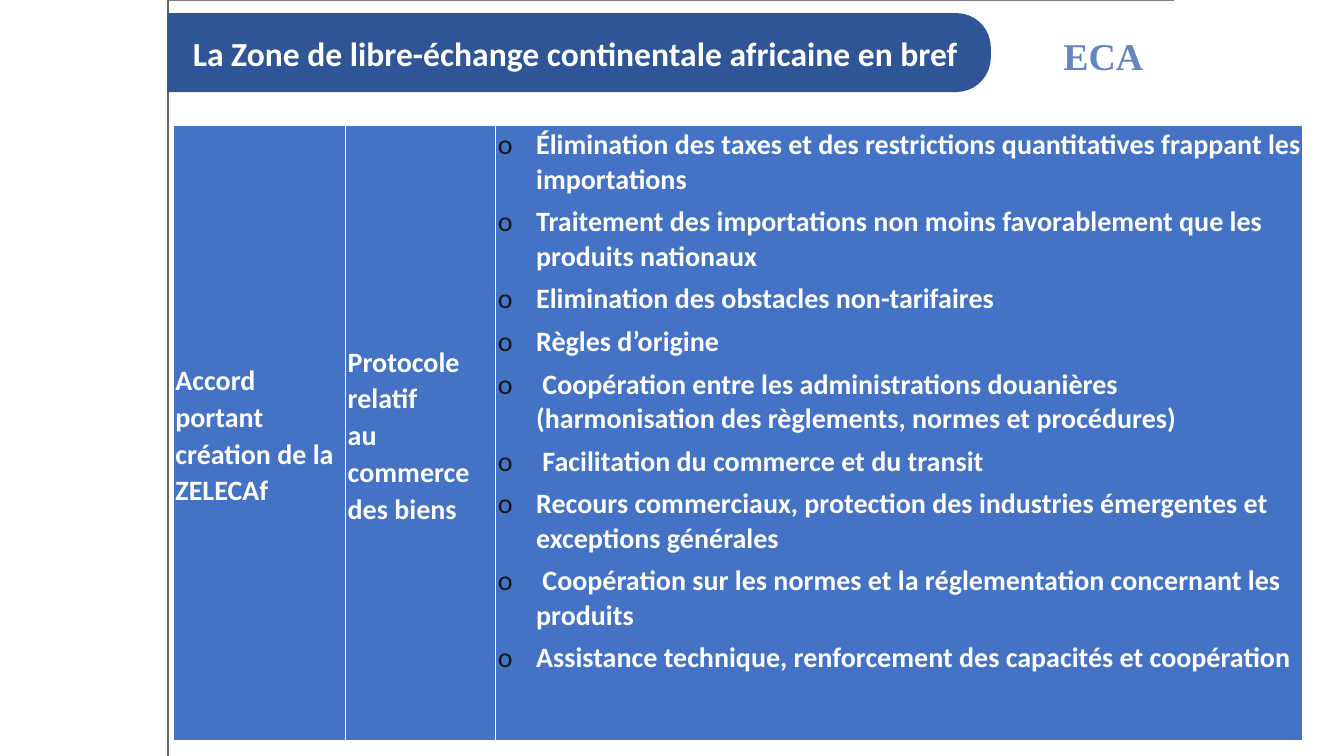
from dataclasses import dataclass
from math import cos, radians, sin

from lxml import etree
from pptx import Presentation
from pptx.dml.color import RGBColor
from pptx.enum.shapes import MSO_CONNECTOR
from pptx.enum.text import MSO_ANCHOR, MSO_AUTO_SIZE, PP_ALIGN
from pptx.oxml.ns import qn
from pptx.util import Emu, Inches, Pt

WHITE = RGBColor(0xFF, 0xFF, 0xFF)
NAVY = RGBColor(0x2F, 0x55, 0x97)
BLUE = RGBColor(0x44, 0x72, 0xC4)
PALE_BLUE = RGBColor(0x63, 0x85, 0xC1)
FRAME_GREY = RGBColor(0x7B, 0x7B, 0x7B)
RULE_GREY = RGBColor(0x66, 0x66, 0x66)
BULLET_BLACK = RGBColor(0x18, 0x17, 0x17)

STRAIGHT = MSO_CONNECTOR.STRAIGHT
MIDDLE = MSO_ANCHOR.MIDDLE
TOP = MSO_ANCHOR.TOP
CENTER = PP_ALIGN.CENTER
NO_AUTOSIZE = MSO_AUTO_SIZE.NONE
BODY_FONT = "Calibri"
MARK_FONT = "Times New Roman"

COLUMNS, ROWS = 160, 90
TITLE_ONLY = 5
HANGING = Inches(0.38)
BORDERS = {"a:lnL": 1, "a:lnR": 1, "a:lnT": 1, "a:lnB": 3}


@dataclass(frozen=True)
class Area:
    left: float
    top: float
    width: float
    height: float

    def lengths(self) -> tuple:
        return tuple(grid(n) for n in (self.left, self.top, self.width, self.height))


@dataclass(frozen=True)
class Column:
    width: float
    texts: tuple
    anchor: object = MIDDLE
    spacing: float = 1.07
    after: float = 0
    bulleted: bool = False


BANNER = Area(19.92, 1.56, 98.04, 9.4)
MARK = Area(126.6, 3.84, 9.96, 5.4)
TABLE = Area(20.64, 14.88, 134.4, 73.44)
FRAME_LEFT, FRAME_RIGHT = 20, 139.8
CORNER = 4.1

TABLE_COLUMNS = (
    Column(20.52, ("Accord portant création de la ZELECAf",)),
    Column(17.88, ("Protocole relatif", "au commerce des biens"), after=0.1),
    Column(96, (
        "Élimination des taxes et des restrictions quantitatives frappant les importations",
        "Traitement des importations non moins favorablement que les produits nationaux",
        "Elimination des obstacles non-tarifaires",
        "Règles d’origine",
        " Coopération entre les administrations douanières "
        "(harmonisation des règlements, normes et procédures)",
        " Facilitation du commerce et du transit",
        "Recours commerciaux, protection des industries émergentes et exceptions générales",
        " Coopération sur les normes et la réglementation concernant les produits",
        "Assistance technique, renforcement des capacités et coopération",
    ), TOP, 1, 6, True),
)


def grid(count: float) -> Emu:
    return Emu(round(count * Inches(13.333333) / COLUMNS))


def add_span(para, text: str, size: float, color: RGBColor, font: str = BODY_FONT) -> None:
    span = para.add_run()
    span.text = text
    span.font.name = font
    span.font.size = Pt(size)
    span.font.bold = True
    span.font.color.rgb = color


def set_insets(frame, inset: float) -> None:
    frame.margin_left = frame.margin_right = Inches(inset)
    frame.margin_top = frame.margin_bottom = Inches(inset)
    frame.word_wrap = True


def add_outline(page, points: list, closed: bool):
    spots = [(grid(x), grid(y)) for x, y in points]
    builder = page.shapes.build_freeform(*spots[0])
    builder.add_line_segments(spots[1:], close=closed)
    shape = builder.convert_to_shape()
    shape.shadow.inherit = False
    return shape


def add_frame(page) -> None:
    frame = add_outline(page, [(FRAME_RIGHT, ROWS), (FRAME_LEFT, ROWS),
                               (FRAME_LEFT, 0), (FRAME_RIGHT, 0)], False)
    frame.fill.background()
    frame.line.color.rgb = FRAME_GREY
    frame.line.width = Pt(0.25)
    rule = page.shapes.add_connector(STRAIGHT, grid(FRAME_LEFT), 0,
                                     grid(FRAME_LEFT), grid(ROWS))
    rule.line.color.rgb = RULE_GREY
    rule.line.width = Pt(1)
    etree.SubElement(rule._element.spPr, qn("a:effectLst"))


def add_banner(page) -> None:
    bottom = BANNER.top + BANNER.height
    center = BANNER.left + BANNER.width - CORNER
    points = [(BANNER.left, bottom), (BANNER.left, BANNER.top)]
    for start, middle in ((-90, BANNER.top + CORNER), (0, bottom - CORNER)):
        points += [(center + CORNER * cos(radians(angle)), middle + CORNER * sin(radians(angle)))
                   for angle in range(start, start + 91, 10)]
    banner = add_outline(page, points, True)
    banner.fill.solid()
    banner.fill.fore_color.rgb = NAVY
    banner.line.fill.background()

    title = page.shapes.title
    title.left, title.top, title.width, title.height = BANNER.lengths()
    banner._element.addnext(title._element)
    frame = title.text_frame
    set_insets(frame, 0.05)
    frame.auto_size = NO_AUTOSIZE
    frame.vertical_anchor = MIDDLE
    para = frame.paragraphs[0]
    para.alignment = CENTER
    add_span(para, "La Zone de libre-échange continentale africaine en bref ", 24, WHITE)


def add_mark(page) -> None:
    box = page.shapes.add_textbox(*MARK.lengths())
    set_insets(box.text_frame, 0)
    add_span(box.text_frame.paragraphs[0], "ECA", 27, PALE_BLUE, MARK_FONT)


def add_bullet(para) -> None:
    props = para._p.get_or_add_pPr()
    props.set("marL", str(HANGING))
    props.set("indent", str(-HANGING))
    tint = etree.SubElement(props, qn("a:buClr"))
    etree.SubElement(tint, qn("a:srgbClr"), val=str(BULLET_BLACK))
    etree.SubElement(props, qn("a:buFont"), typeface=BODY_FONT)
    etree.SubElement(props, qn("a:buChar"), char="o")


def fill_cell(cell, column: Column) -> None:
    props = cell._tc.get_or_add_tcPr()
    for side, width in BORDERS.items():
        border = etree.SubElement(props, qn(side), w=str(Pt(width)))
        paint = etree.SubElement(border, qn("a:solidFill"))
        etree.SubElement(paint, qn("a:srgbClr"), val=str(WHITE))
    cell.fill.solid()
    cell.fill.fore_color.rgb = BLUE
    cell.margin_left, cell.margin_top = Inches(0.02), Inches(0.03)
    cell.margin_right, cell.margin_bottom = Inches(0.01), 0
    cell.vertical_anchor = column.anchor
    frame = cell.text_frame
    for index, text in enumerate(column.texts):
        para = frame.add_paragraph() if index else frame.paragraphs[0]
        if column.bulleted:
            add_bullet(para)
        para.line_spacing = column.spacing
        para.space_after = Pt(column.after)
        add_span(para, text, 20, WHITE)


def add_agreement_table(page) -> None:
    table = page.shapes.add_table(1, len(TABLE_COLUMNS), *TABLE.lengths()).table
    table.first_row = table.horz_banding = False
    for index, column in enumerate(TABLE_COLUMNS):
        table.columns[index].width = grid(column.width)
        fill_cell(table.cell(0, index), column)


def main() -> None:
    deck = Presentation()
    deck.slide_width, deck.slide_height = grid(COLUMNS), grid(ROWS)
    page = deck.slides.add_slide(deck.slide_layouts[TITLE_ONLY])
    add_frame(page)
    add_banner(page)
    add_mark(page)
    add_agreement_table(page)
    deck.save("out.pptx")


if __name__ == "__main__":
    main()
